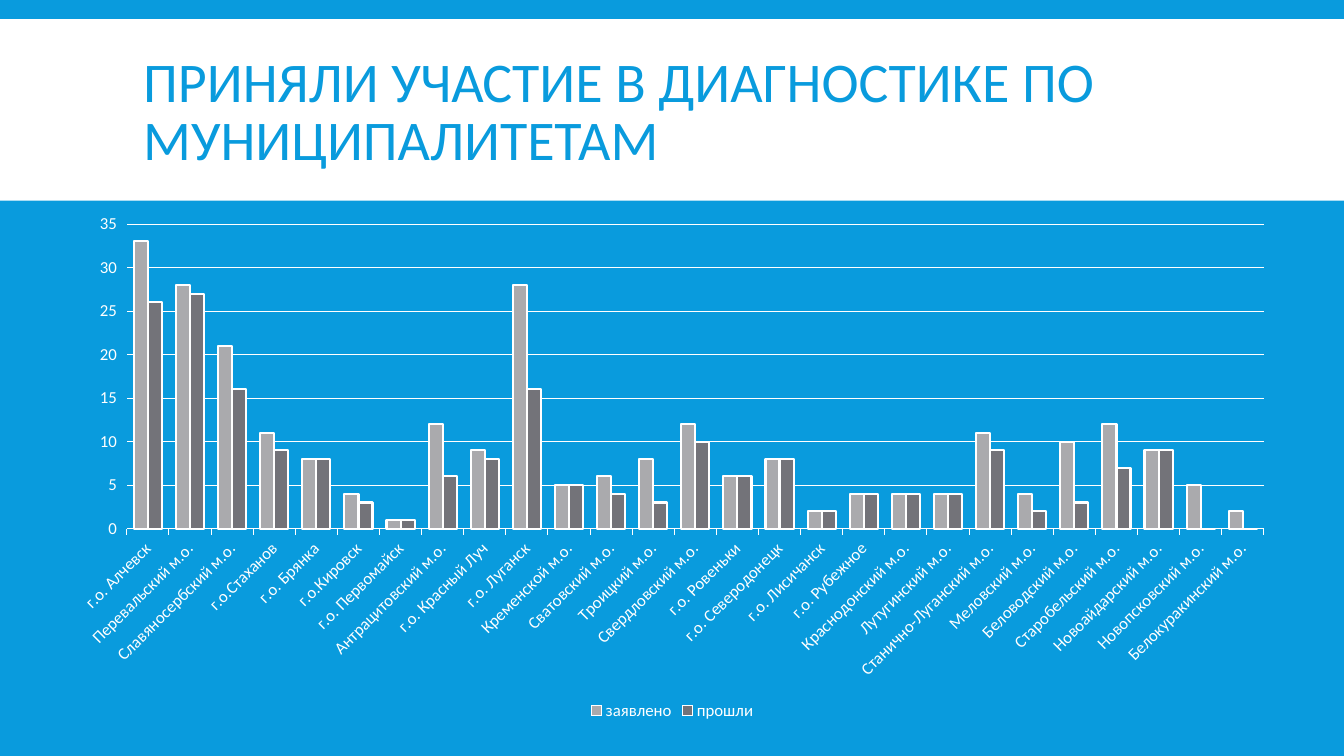
from pptx import Presentation
from pptx.chart.data import CategoryChartData
from pptx.dml.color import RGBColor
from pptx.enum.chart import XL_CHART_TYPE as ChartType, XL_LEGEND_POSITION as LegendPosition, XL_TICK_MARK as TickMark
from pptx.enum.shapes import MSO_SHAPE as Shape
from pptx.enum.text import MSO_ANCHOR as Anchor, MSO_AUTO_SIZE as AutoSize, PP_ALIGN as Align
from pptx.util import Inches, Pt

FONT = "Calibri"
BLUE = "099BDD"
WHITE = "FFFFFF"
TITLE = "ПРИНЯЛИ УЧАСТИЕ В ДИАГНОСТИКЕ ПО МУНИЦИПАЛИТЕТАМ"
SERIES_COLORS = {"заявлено": "AAAAAD", "прошли": "737379"}
RESULTS = [
    ("г.о. Алчевск", 33, 26),
    ("Перевальский м.о.", 28, 27),
    ("Славяносербский м.о.", 21, 16),
    ("г.о.Стаханов", 11, 9),
    ("г.о. Брянка", 8, 8),
    ("г.о.Кировск", 4, 3),
    ("г.о. Первомайск", 1, 1),
    ("Антрацитовский м.о.", 12, 6),
    ("г.о. Красный Луч", 9, 8),
    ("г.о. Луганск", 28, 16),
    ("Кременской м.о.", 5, 5),
    ("Сватовский м.о.", 6, 4),
    ("Троицкий м.о.", 8, 3),
    ("Свердловский м.о.", 12, 10),
    ("г.о. Ровеньки", 6, 6),
    ("г.о. Северодонецк", 8, 8),
    ("г.о. Лисичанск", 2, 2),
    ("г.о. Рубежное", 4, 4),
    ("Краснодонский м.о.", 4, 4),
    ("Лутугинский м.о.", 4, 4),
    ("Станично-Луганский м.о.", 11, 9),
    ("Меловский м.о.", 4, 2),
    ("Беловодский м.о.", 10, 3),
    ("Старобельский м.о.", 12, 7),
    ("Новоайдарский м.о.", 9, 9),
    ("Новопсковский м.о.", 5, 0),
    ("Белокуракинский м.о.", 2, 0),
]


def paint(fill, color):
    """Make a fill solid in the given hex colour."""
    fill.solid()
    fill.fore_color.rgb = RGBColor.from_string(color)


def style_font(font, size, color):
    """Set the typeface, point size and colour of a font."""
    font.name = FONT
    font.size = Pt(size)
    paint(font.fill, color)


def style_line(line, width):
    """Draw a white line of the given point width."""
    paint(line.fill, WHITE)
    line.width = Pt(width)


def add_header(page, left, top, width, height):
    """Place the white band and the title inside it."""
    band = page.shapes.add_shape(Shape.RECTANGLE, left, top, width, height)
    band.shadow.inherit = False
    paint(band.fill, WHITE)
    band.line.fill.background()
    title = page.shapes.title
    title.element.addprevious(band.element)
    title.left, title.top = left + Inches(1.32), top + Inches(0.12)
    title.width, title.height = Inches(10.7), height - Inches(0.15)
    frame = title.text_frame
    frame.text = TITLE
    frame.word_wrap = True
    frame.auto_size = AutoSize.NONE
    frame.vertical_anchor = Anchor.MIDDLE
    para = frame.paragraphs[0]
    para.alignment = Align.LEFT
    para.line_spacing = 0.85
    style_font(para.font, 40, BLUE)


def style_axes(chart):
    """Format the slanted municipality labels, the value scale and the gridlines."""
    names, values = chart.category_axis, chart.value_axis
    for axis in (names, values):
        axis.major_tick_mark = TickMark.OUTSIDE
        axis.minor_tick_mark = TickMark.NONE
        style_font(axis.tick_labels.font, 12, WHITE)
    style_line(names.format.line, 0.75)
    for label_body in chart.element.xpath(".//c:catAx/c:txPr/a:bodyPr"):
        label_body.set("rot", "-2700000")
    values.format.line.fill.background()
    values.minimum_scale, values.maximum_scale, values.major_unit = 0, 35, 5
    values.has_major_gridlines = True
    style_line(values.major_gridlines.format.line, 0.75)


def add_results_chart(page, left, top, width, height):
    """Place the column chart of registered and tested participants."""
    names, *columns = zip(*RESULTS)
    data = CategoryChartData(number_format="General")
    data.categories = names
    for label, counts in zip(SERIES_COLORS, columns):
        data.add_series(label, counts)
    chart = page.shapes.add_chart(ChartType.COLUMN_CLUSTERED, left, top, width, height, data).chart
    style_font(chart.font, 10, WHITE)
    chart.has_title = False
    chart.has_legend = True
    chart.legend.position = LegendPosition.BOTTOM
    chart.legend.include_in_layout = False
    style_font(chart.legend.font, 12, WHITE)
    style_axes(chart)
    plot = chart.plots[0]
    plot.vary_by_categories = False
    plot.gap_width, plot.overlap = 100, 0
    for series in plot.series:
        paint(series.format.fill, SERIES_COLORS[series.name])
        style_line(series.format.line, 1.5)


def main():
    """Build the slide and save the deck."""
    deck = Presentation()
    deck.slide_width, deck.slide_height = Inches(13.33), Inches(7.5)
    page = deck.slides.add_slide(deck.slide_layouts[5])
    paint(page.background.fill, BLUE)
    add_header(page, 0, Inches(0.19), deck.slide_width, Inches(1.8))
    add_results_chart(page, Inches(0.56), Inches(2.02), Inches(12.22), Inches(5.17))
    deck.save("out.pptx")


if __name__ == "__main__":
    main()
